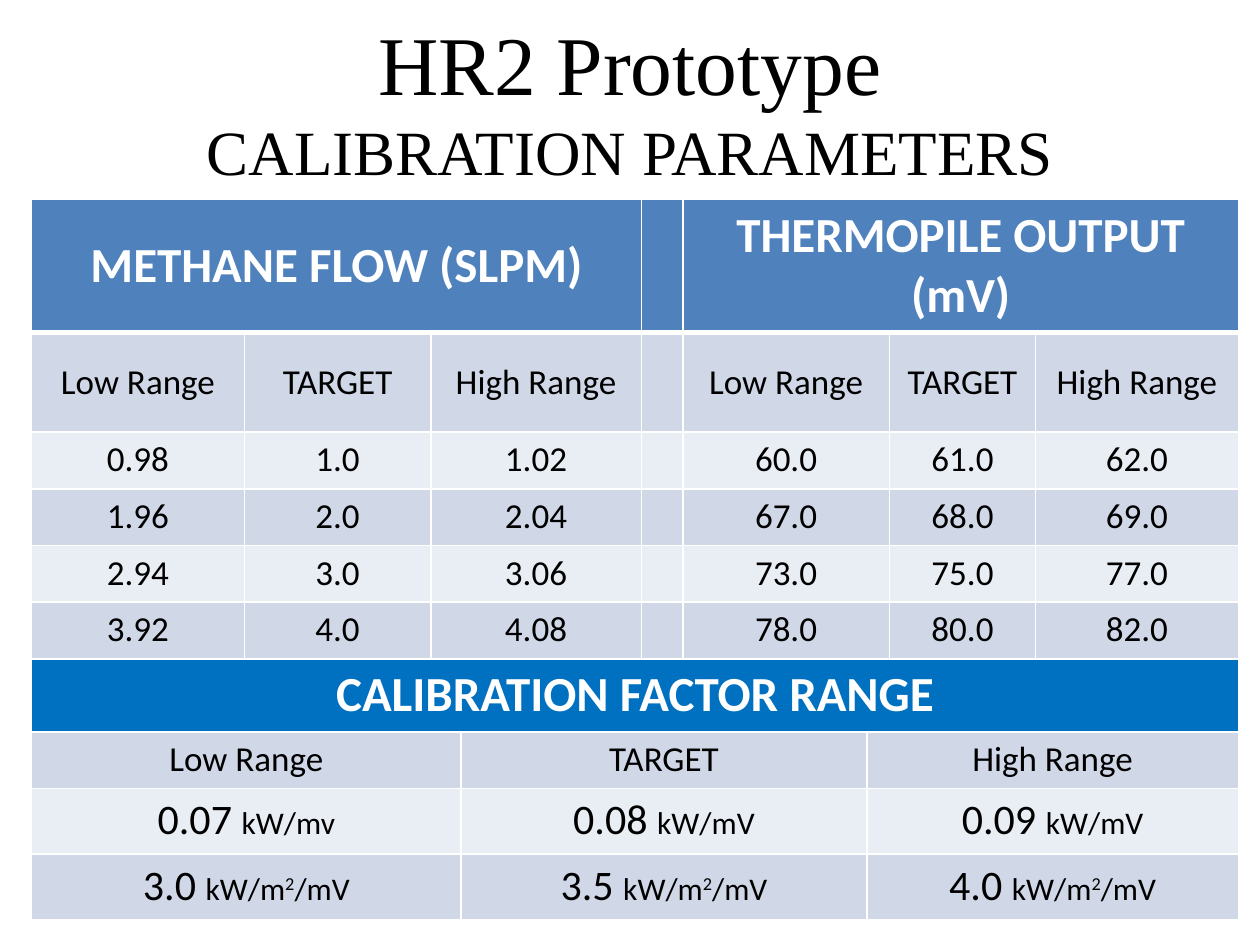
"""Build the HR2 Prototype calibration parameters slide."""
import pptx
import pptx.dml.color
import pptx.enum.text
import pptx.oxml
import pptx.oxml.ns
import pptx.util
from pptx.util import Inches

BLACK = pptx.dml.color.RGBColor(0x00, 0x00, 0x00)
WHITE = pptx.dml.color.RGBColor(0xFF, 0xFF, 0xFF)
HEADER_BLUE = pptx.dml.color.RGBColor(0x4F, 0x81, 0xBD)
FACTOR_BLUE = pptx.dml.color.RGBColor(0x00, 0x70, 0xC0)
BAND_DARK = pptx.dml.color.RGBColor(0xD0, 0xD8, 0xE8)
BAND_LIGHT = pptx.dml.color.RGBColor(0xE9, 0xED, 0xF4)

TITLE_FONT = "Times New Roman"
TABLE_FONT = "Calibri"
COLUMN_WIDTHS = [1.69, 1.48, 0.24, 1.43, 0.33, 1.46, 0.18, 1.16, 1.61]
ROW_HEIGHTS = [1.06, 0.79, 0.45, 0.45, 0.45, 0.45, 0.58, 0.45, 0.52, 0.52]
ROW_FILLS = [HEADER_BLUE, BAND_DARK, BAND_LIGHT, BAND_DARK, BAND_LIGHT,
             BAND_DARK, FACTOR_BLUE, BAND_DARK, BAND_LIGHT, BAND_DARK]

HEADING_SPANS = [(0, 4), (5, 4)]
READING_SPANS = [(0, 1), (1, 1), (2, 2), (5, 2), (7, 1), (8, 1)]
FULL_SPAN = [(0, 9)]
FACTOR_SPANS = [(0, 3), (3, 3), (6, 3)]

RANGE_LABELS = ["Low Range", "TARGET", "High Range"]
READINGS = [
    ["0.98", "1.0", "1.02", "60.0", "61.0", "62.0"],
    ["1.96", "2.0", "2.04", "67.0", "68.0", "69.0"],
    ["2.94", "3.0", "3.06", "73.0", "75.0", "77.0"],
    ["3.92", "4.0", "4.08", "78.0", "80.0", "82.0"],
]
FACTORS = [("0.07", "kW/mv"), ("0.08", "kW/mV"), ("0.09", "kW/mV")]
FLUX_FACTORS = ["3.0", "3.5", "4.0"]


def add_run(paragraph, text, size, font=TABLE_FONT, color=BLACK, bold=False, superscript=False):
    """Append one formatted run to a paragraph."""
    run = paragraph.add_run()
    run.text = text
    run.font.size = pptx.util.Pt(size)
    run.font.name = font
    run.font.color.rgb = color
    run.font.bold = bold
    if superscript:
        run._r.get_or_add_rPr().set("baseline", "30000")


def add_title(slide):
    """Add the two-line centred title."""
    shape = slide.shapes.add_textbox(Inches(0.5), Inches(0.17), Inches(9), Inches(1.25))
    frame = shape.text_frame
    frame.word_wrap = True
    frame.vertical_anchor = pptx.enum.text.MSO_ANCHOR.MIDDLE
    paragraph = frame.paragraphs[0]
    paragraph.alignment = pptx.enum.text.PP_ALIGN.CENTER
    add_run(paragraph, "HR2 Prototype", 47.7, TITLE_FONT)
    paragraph.add_line_break()
    add_run(paragraph, "CALIBRATION PARAMETERS", 36, TITLE_FONT)


def set_borders(cell, top=1, bottom=1):
    """Draw white borders round a cell, with widths in points."""
    properties = cell._tc.get_or_add_tcPr()
    for side, width in (("L", 1), ("R", 1), ("T", top), ("B", bottom)):
        properties.append(pptx.oxml.parse_xml(
            f'<a:ln{side} {pptx.oxml.ns.nsdecls("a")} w="{pptx.util.Pt(width)}">'
            f'<a:solidFill><a:srgbClr val="{WHITE}"/></a:solidFill></a:ln{side}>'))


def add_grid(slide):
    """Add the table with its sizes, fills and borders, and return it."""
    table = slide.shapes.add_table(
        len(ROW_HEIGHTS), len(COLUMN_WIDTHS), Inches(0.25), Inches(1.58),
        Inches(sum(COLUMN_WIDTHS)), Inches(sum(ROW_HEIGHTS))).table
    for column, width in zip(table.columns, COLUMN_WIDTHS):
        column.width = Inches(width)
    for index, (row, height) in enumerate(zip(table.rows, ROW_HEIGHTS)):
        row.height = Inches(height)
        for cell in row.cells:
            set_borders(cell, top=3 if index == 1 else 1, bottom=3 if index == 0 else 1)
            cell.fill.solid()
            cell.fill.fore_color.rgb = ROW_FILLS[index]
    return table


def fill_row(table, row, spans, entries, middle=False):
    """Merge the spans of a row and write one list of runs into each."""
    for (column, span), runs in zip(spans, entries):
        cell = table.cell(row, column)
        if span > 1:
            cell.merge(table.cell(row, column + span - 1))
        if middle:
            cell.vertical_anchor = pptx.enum.text.MSO_ANCHOR.MIDDLE
        paragraph = cell.text_frame.paragraphs[0]
        paragraph.alignment = pptx.enum.text.PP_ALIGN.CENTER
        for run in runs:
            add_run(paragraph, **run)


def headings(*texts):
    """Return bold white entries for heading cells."""
    return [[dict(text=text, size=28, color=WHITE, bold=True)] for text in texts]


def plain(texts):
    """Return regular entries for label and value cells."""
    return [[dict(text=text, size=20)] for text in texts]


def factor(value, unit):
    """Return the runs of a calibration factor and its unit."""
    return [dict(text=f"{value} ", size=24), dict(text=unit, size=18)]


def flux_factor(value):
    """Return the runs of a factor per square metre."""
    return factor(value, "kW/m") + [dict(text="2", size=18, superscript=True),
                                    dict(text="/mV", size=18)]


def add_calibration_table(slide):
    """Add the calibration table with all its rows."""
    table = add_grid(slide)
    fill_row(table, 0, HEADING_SPANS,
             headings("METHANE FLOW (SLPM)", "THERMOPILE OUTPUT (mV)"), middle=True)
    fill_row(table, 1, READING_SPANS, plain(RANGE_LABELS * 2), middle=True)
    for row, values in enumerate(READINGS, start=2):
        fill_row(table, row, READING_SPANS, plain(values))
    fill_row(table, 6, FULL_SPAN, headings("CALIBRATION FACTOR RANGE"))
    fill_row(table, 7, FACTOR_SPANS, plain(RANGE_LABELS))
    fill_row(table, 8, FACTOR_SPANS, [factor(value, unit) for value, unit in FACTORS])
    fill_row(table, 9, FACTOR_SPANS, [flux_factor(value) for value in FLUX_FACTORS])


def main():
    """Create the presentation and save it."""
    presentation = pptx.Presentation()
    presentation.slide_width = Inches(10)
    presentation.slide_height = Inches(7.5)
    slide = presentation.slides.add_slide(presentation.slide_layouts[6])
    add_title(slide)
    add_calibration_table(slide)
    presentation.save("out.pptx")


if __name__ == "__main__":
    main()
